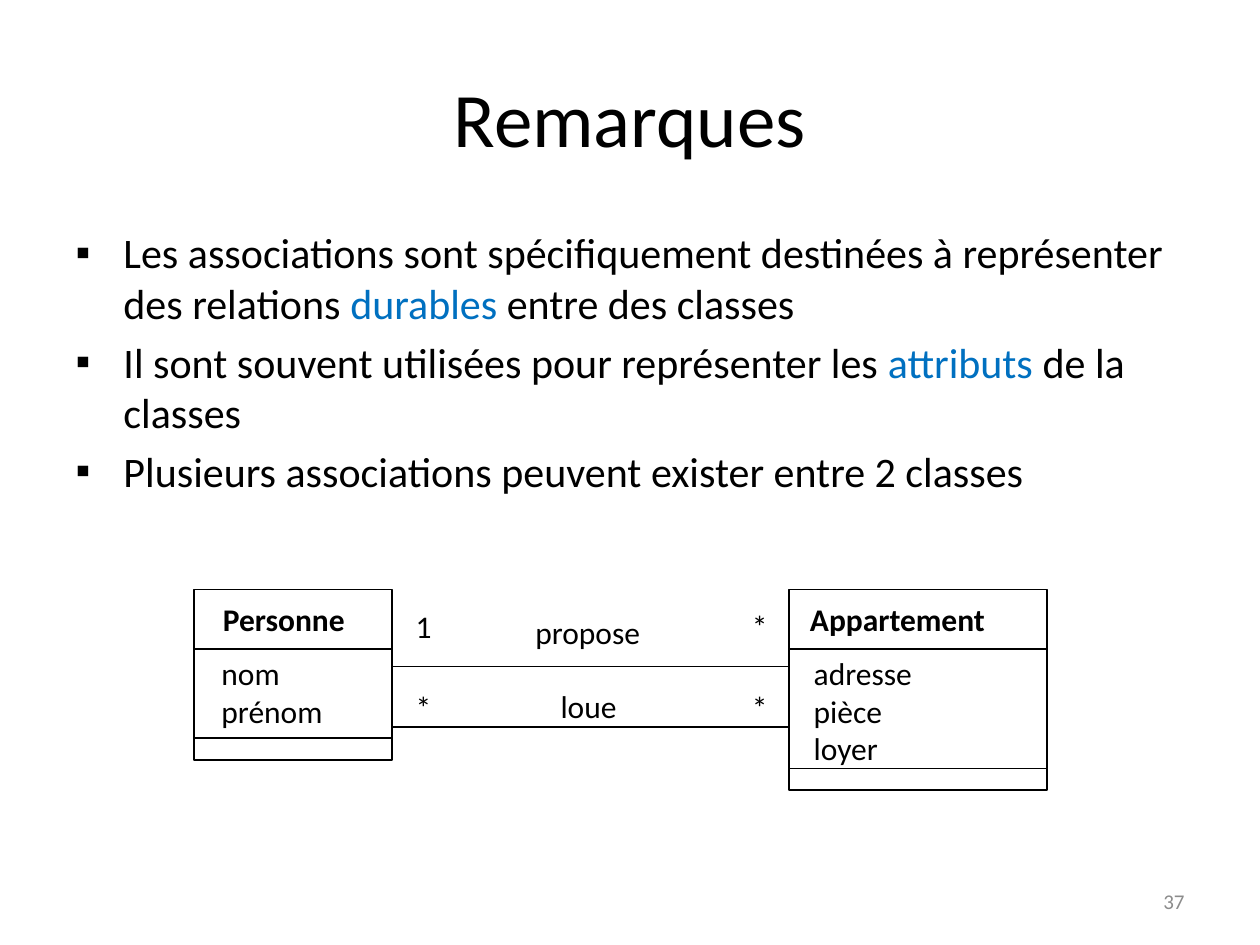
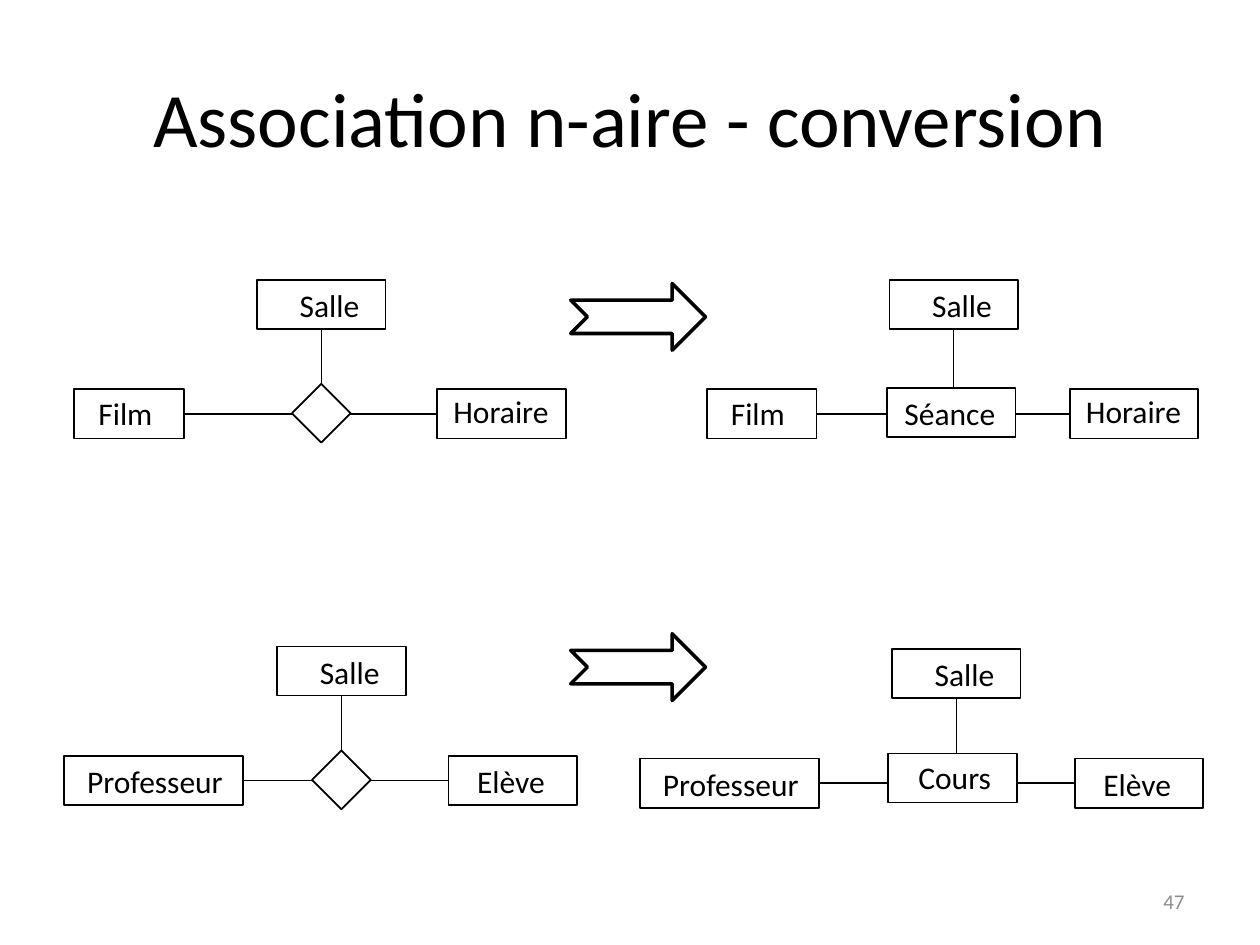
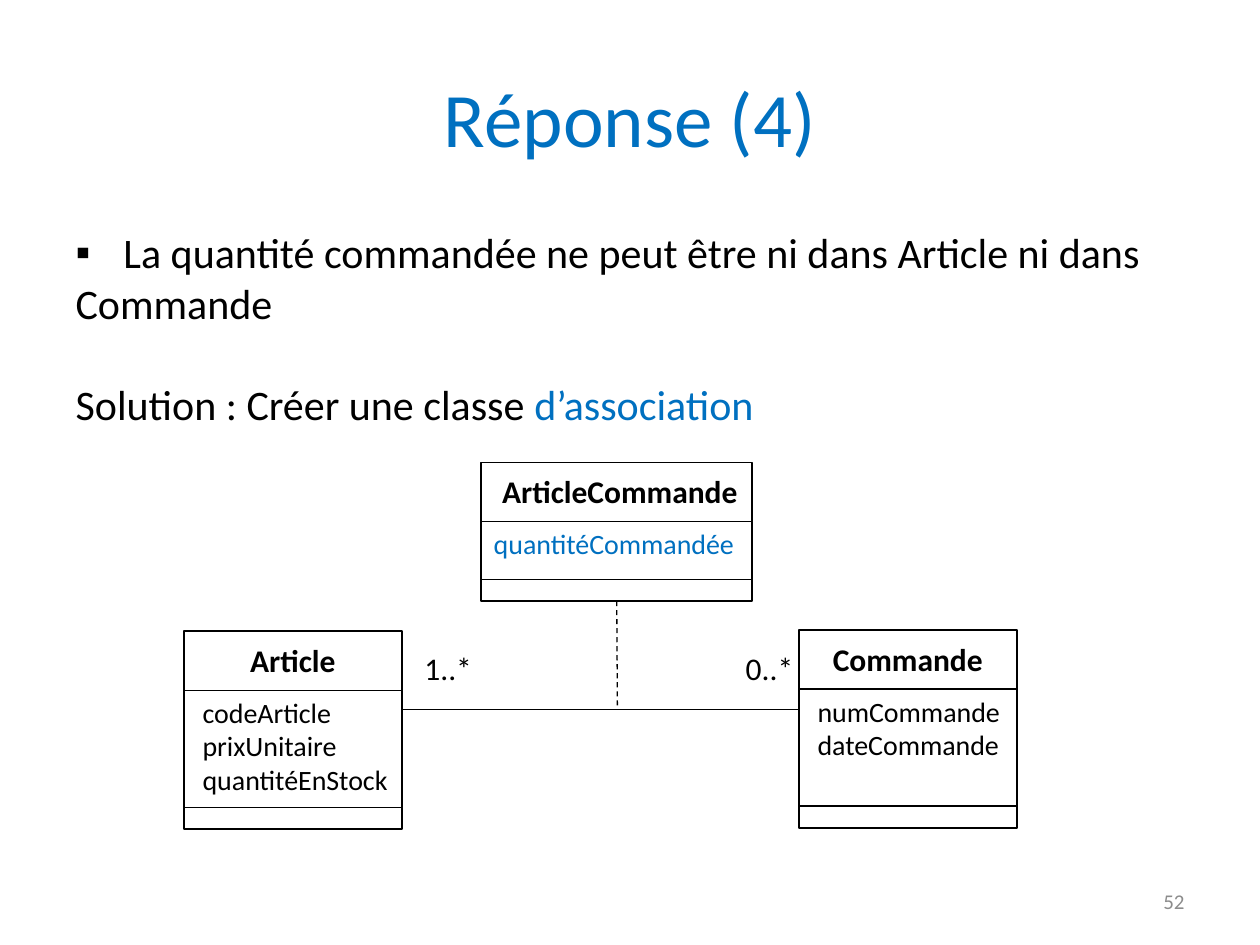
from dataclasses import dataclass

from lxml.etree import SubElement
from pptx import Presentation
from pptx.dml.color import RGBColor
from pptx.enum.dml import MSO_LINE_DASH_STYLE as Dash
from pptx.enum.shapes import MSO_CONNECTOR as Connector
from pptx.enum.shapes import MSO_SHAPE as Shape
from pptx.enum.text import MSO_ANCHOR as Anchor
from pptx.enum.text import MSO_AUTO_SIZE as AutoSize
from pptx.enum.text import PP_ALIGN as Align
from pptx.oxml.ns import qn
from pptx.util import Inches, Pt


@dataclass(frozen=True)
class Theme:
    font: str = "Calibri"
    ink: RGBColor = RGBColor(0, 0, 0)
    accent: RGBColor = RGBColor(0x00, 0x70, 0xC0)
    muted: RGBColor = RGBColor(0x8C, 0x8C, 0x8C)
    paper: RGBColor = RGBColor(0xFF, 0xFF, 0xFF)
    title_size: int = 44
    body_size: int = 24
    label_size: int = 18
    attribute_size: int = 16
    number_size: int = 12
    connector_width: float = 0.75
    outline_width: float = 1
    arrow_width: float = 2


THEME = Theme()
TITLE_BOX = (0.5, 0.3, 9, 1.25)
NUMBER_BOX = (7.17, 6.95, 2.33, 0.4)
LABEL_HEIGHT = 0.4
HEADER_HEIGHT = 0.47
OPERATIONS_HEIGHT = 0.17
ENTITY_HEIGHT = 0.39
NODE_SIZE = 0.33
ENTITIES = {
    "Film": (0.87, 0, -0.01, 0.81, Align.CENTER),
    "Salle": (1.02, -0.03, 0, 1.21, Align.CENTER),
    "Horaire": (1.02, 0.03, -0.03, 1.21, Align.LEFT),
    "Séance": (1.02, 0.04, 0, 1.21, Align.LEFT),
    "Professeur": (1.42, 0.01, 0, 1.42, Align.CENTER),
    "Elève": (1.02, -0.11, 0, 1.21, Align.CENTER),
    "Cours": (1.02, 0.14, -0.01, 1.21, Align.LEFT),
}


def apply_format(target, values):
    for name, value in values.items():
        setattr(target, name, value)


def format_font(font, size, color=THEME.ink, bold=False):
    apply_format(font, {"name": THEME.font, "size": Pt(size), "bold": bold})
    font.color.rgb = color


def place(shape, box):
    names = ("left", "top", "width", "height")
    apply_format(shape, dict(zip(names, map(Inches, box))))


def add_text(slide, box, lines, size=THEME.label_size, color=THEME.ink,
             bold=False, align=Align.LEFT, anchor=Anchor.TOP):
    frame = slide.shapes.add_textbox(*map(Inches, box)).text_frame
    apply_format(frame, {"word_wrap": True, "vertical_anchor": anchor,
                         "text": "\n".join(lines)})
    for paragraph in frame.paragraphs:
        paragraph.alignment = align
        format_font(paragraph.font, size, color, bold)


def add_outline(slide, box, kind=Shape.RECTANGLE, fill=None,
                width=THEME.outline_width):
    shape = slide.shapes.add_shape(kind, *map(Inches, box))
    shape.shadow.inherit = False
    if fill is None:
        shape.fill.background()
    else:
        shape.fill.solid()
        shape.fill.fore_color.rgb = fill
    shape.line.color.rgb = THEME.ink
    shape.line.width = Pt(width)
    return shape


def add_line(slide, start, end, dash=None):
    line = slide.shapes.add_connector(
        Connector.STRAIGHT, *map(Inches, (*start, *end)))
    line.line.color.rgb = THEME.ink
    apply_format(line.line, {"width": Pt(THEME.connector_width),
                             "dash_style": dash})
    SubElement(line._element.spPr, qn("a:effectLst"))
    return line


def add_slide(presentation, layout, title, number, color=THEME.ink):
    slide = presentation.slides.add_slide(presentation.slide_layouts[layout])
    place(slide.shapes.title, TITLE_BOX)
    frame = slide.shapes.title.text_frame
    apply_format(frame, {"text": title, "vertical_anchor": Anchor.MIDDLE,
                         "auto_size": AutoSize.NONE})
    paragraph = frame.paragraphs[0]
    paragraph.alignment = Align.CENTER
    format_font(paragraph.font, THEME.title_size, color)
    add_text(slide, NUMBER_BOX, [number], THEME.number_size, THEME.muted,
             align=Align.RIGHT, anchor=Anchor.MIDDLE)
    return slide


def set_bullet(paragraph, bulleted):
    properties = paragraph._p.get_or_add_pPr()
    indent = Inches(0.38) if bulleted else 0
    properties.set("marL", str(indent))
    properties.set("indent", str(-indent))
    if bulleted:
        SubElement(properties, qn("a:buFont"), typeface="Arial")
        SubElement(properties, qn("a:buChar"), char="▪")
    else:
        SubElement(properties, qn("a:buNone"))


def fill_body(slide, box, items):
    body = slide.placeholders[1]
    place(body, box)
    frame = body.text_frame
    frame.auto_size = AutoSize.NONE
    for index, (text, bulleted, space) in enumerate(items):
        paragraph = frame.add_paragraph() if index else frame.paragraphs[0]
        set_bullet(paragraph, bulleted)
        paragraph.space_before = Pt(space)
        for position, part in enumerate(text.split("|")):
            run = paragraph.add_run()
            run.text = part
            color = THEME.accent if position % 2 else THEME.ink
            format_font(run.font, THEME.body_size, color)


def add_class(slide, box, name, name_span, name_align, attributes,
              attribute_offset, size, color=THEME.ink):
    left, top, width, height = box
    attributes_height = height - HEADER_HEIGHT - OPERATIONS_HEIGHT
    bottom = top
    for part in (HEADER_HEIGHT, attributes_height, OPERATIONS_HEIGHT):
        compartment = add_outline(slide, (left, bottom, width, part))
        bottom += part
    offset, name_width = name_span
    add_text(slide, (left + offset, top + 0.03, name_width, LABEL_HEIGHT),
             [name], bold=True, align=name_align)
    add_text(slide, (left + attribute_offset, top + HEADER_HEIGHT - 0.01,
                     width, attributes_height), attributes, size, color)
    return compartment


def add_entity(slide, left, top, name, fill=None):
    width, dx, dy, label_width, align = ENTITIES[name]
    shape = add_outline(slide, (left, top, width, ENTITY_HEIGHT), fill=fill)
    add_text(slide, (left + dx, top + dy, label_width, LABEL_HEIGHT),
             [name], align=align)
    return shape


def add_association(slide, origin, names, room_offset, right_offset,
                    center=None, center_offset=(0, 0)):
    left, top = origin
    first, last = names
    first_entity = add_entity(slide, left, top + 0.87, first)
    last_entity = add_entity(slide, left + right_offset, top + 0.87, last)
    room = add_entity(slide, left + room_offset, top, "Salle")
    axis = left + room_offset + ENTITIES["Salle"][0] / 2
    middle = top + 1.06

    link = add_line(slide, (left, middle), (left + right_offset, middle))
    link.begin_connect(first_entity, 3)
    link.end_connect(last_entity, 1)
    branch = add_line(slide, (axis, middle), (axis, top + ENTITY_HEIGHT))
    branch.end_connect(room, 2)

    if center:
        dx, dy = center_offset
        add_entity(slide, left + room_offset + dx, top + dy, center,
                   THEME.paper)
    else:
        half = NODE_SIZE / 2
        node = add_outline(slide, (axis - half, middle - half,
                                   NODE_SIZE, NODE_SIZE), fill=THEME.paper)
        node.rotation = 45


def add_rental_diagram(slide, left, top):
    for height, name, dx, start, end in (
            (0.61, "propose", 2.61, "1", "*"),
            (1.09, "loue", 2.81, "*", "*")):
        label_top = top + (0.09 if start == "1" else 0.73)
        add_line(slide, (left + 1.57, top + height),
                 (left + 4.72, top + height))
        add_text(slide, (left + dx, label_top + (0.05 if start == "1" else -0.01),
                         1.05, LABEL_HEIGHT), [name])
        for offset, multiplicity in ((1.66, start), (4.33, end)):
            add_text(slide, (left + offset, label_top, 0.63, LABEL_HEIGHT),
                     [multiplicity])
    add_class(slide, (left, top, 1.57, 1.35), "Personne", (0.13, 1.34),
              Align.LEFT, ["nom", "prénom"], 0.12, THEME.label_size)
    add_class(slide, (left + 4.72, top, 2.05, 1.59), "Appartement",
              (0.07, 1.98), Align.LEFT, ["adresse", "pièce", "loyer"], 0.1,
              THEME.label_size)


def add_order_diagram(slide, left, top):
    size = THEME.attribute_size
    line_top = top + 1.96
    add_line(slide, (left + 1.73, line_top), (left + 4.88, line_top))
    add_class(slide, (left, top + 1.34, 1.73, 1.57), "Article", (0, 1.73),
              Align.CENTER, ["codeArticle", "prixUnitaire", "quantitéEnStock"],
              0.05, size)
    add_class(slide, (left + 4.88, top + 1.33, 1.73, 1.57), "Commande",
              (0, 1.73), Align.CENTER, ["numCommande", "dateCommande"],
              0.05, size)
    operations = add_class(
        slide, (left + 2.36, top, 2.15, 1.1), "ArticleCommande", (0, 2.2),
        Align.CENTER, ["quantitéCommandée"], 0, size, THEME.accent)
    axis = left + 3.44
    link = add_line(slide, (axis, top + 1.1), (axis, line_top), Dash.DASH)
    link.begin_connect(operations, 2)
    for offset, multiplicity in ((1.81, "1..*"), (4.36, "0..*")):
        add_text(slide, (left + offset, top + 1.43, 0.63, LABEL_HEIGHT),
                 [multiplicity])


def build_remarks(presentation):
    slide = add_slide(presentation, 1, "Remarques", "37")
    fill_body(slide, (0.5, 1.75, 9.3, 2.55), [
        ("Les associations sont spécifiquement destinées à représenter "
         "des relations |durables| entre des classes", True, 0),
        ("Il sont souvent utilisées pour représenter les |attributs| "
         "de la classes", True, 4.8),
        ("Plusieurs associations peuvent exister entre 2 classes", True, 4.8),
    ])
    add_rental_diagram(slide, 1.54, 4.68)


def build_conversion(presentation):
    slide = add_slide(presentation, 5, "Association n-aire - conversion", "47")
    screening = ("Film", "Horaire")
    lesson = ("Professeur", "Elève")
    add_association(slide, (0.59, 2.22), screening, 1.45, 2.88)
    add_association(slide, (5.61, 2.22), screening, 1.45, 2.88,
                    "Séance", (-0.02, 0.86))
    add_association(slide, (0.51, 5.13), lesson, 1.69, 3.05)
    add_association(slide, (5.08, 5.15), lesson, 2, 3.45,
                    "Cours", (-0.03, 0.83))
    for top in (2.25, 5.03):
        add_outline(slide, (4.53, top, 1.07, 0.53),
                    Shape.NOTCHED_RIGHT_ARROW, width=THEME.arrow_width)


def build_answer(presentation):
    slide = add_slide(presentation, 1, "Réponse (4)", "52", THEME.accent)
    fill_body(slide, (0.5, 1.75, 9.3, 2.63), [
        ("La quantité commandée ne peut être ni dans Article ni dans", True, 0),
        ("Commande", False, 0),
        ("Solution : Créer une classe |d’association", False, 28.8),
    ])
    add_order_diagram(slide, 1.46, 3.67)


def main():
    presentation = Presentation()
    apply_format(presentation, {"slide_width": Inches(10),
                                "slide_height": Inches(7.5)})
    for build in (build_remarks, build_conversion, build_answer):
        build(presentation)
    presentation.save("out.pptx")


if __name__ == "__main__":
    main()
